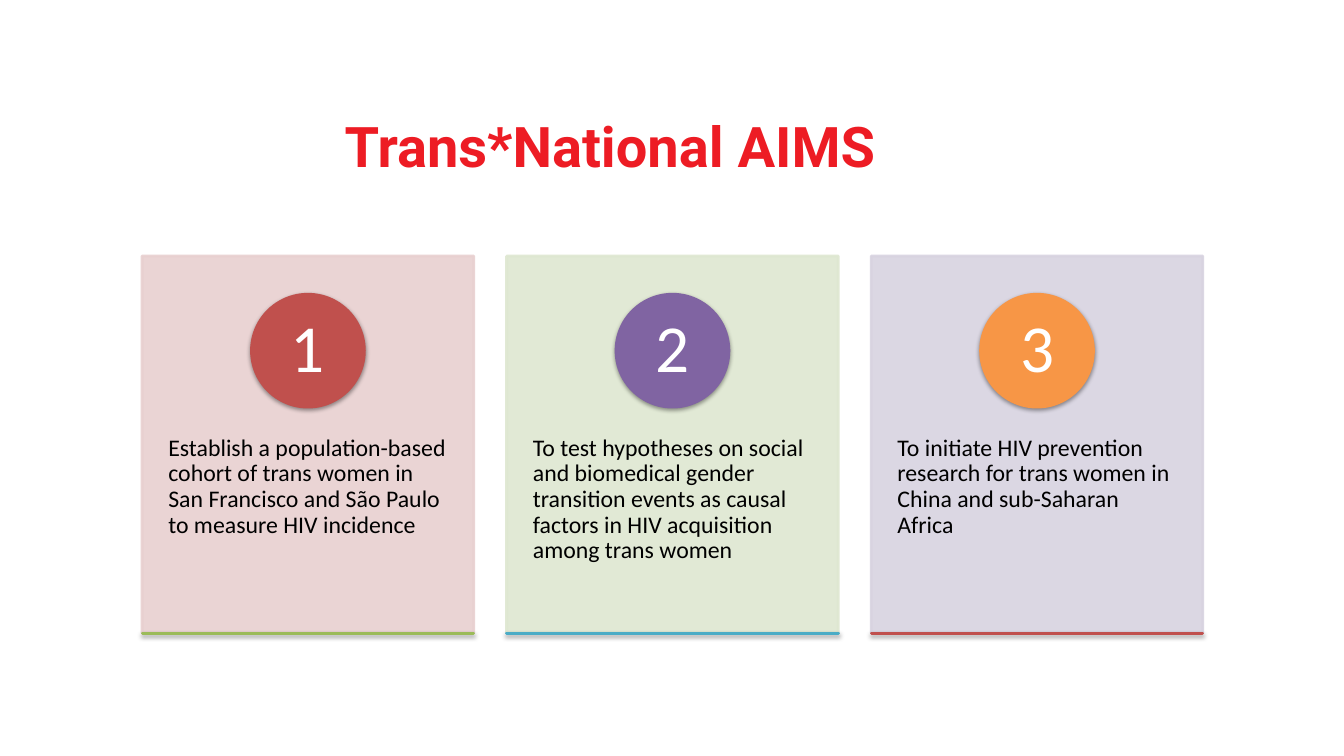
from lxml import etree
from pptx import Presentation
from pptx.dml.color import RGBColor
from pptx.enum.shapes import MSO_SHAPE
from pptx.enum.text import MSO_ANCHOR, PP_ALIGN
from pptx.oxml.ns import qn
from pptx.util import Pt

RECTANGLE, OVAL = MSO_SHAPE.RECTANGLE, MSO_SHAPE.OVAL
TOP, MIDDLE = MSO_ANCHOR.TOP, MSO_ANCHOR.MIDDLE
LEFT, CENTER = PP_ALIGN.LEFT, PP_ALIGN.CENTER

TITLE_RED = RGBColor(0xED, 0x1C, 0x24)
BLACK = RGBColor(0x00, 0x00, 0x00)
WHITE = RGBColor(0xFF, 0xFF, 0xFF)
PALE_RED = RGBColor(0xE8, 0xD0, 0xD0)
PALE_GREEN = RGBColor(0xDE, 0xE7, 0xD1)
PALE_PURPLE = RGBColor(0xD8, 0xD3, 0xE0)
RED = RGBColor(0xC0, 0x50, 0x4D)
GREEN = RGBColor(0x9B, 0xBB, 0x59)
PURPLE = RGBColor(0x80, 0x64, 0xA2)
TEAL = RGBColor(0x4B, 0xAC, 0xC6)
ORANGE = RGBColor(0xF7, 0x96, 0x46)

CARD_LEFT, CARD_TOP = 101.5, 182.9
CARD_WIDTH, CARD_HEIGHT = 236.9, 269.3
CARD_PITCH = 260.4
CIRCLE_TOP, CIRCLE_SIZE = 210.2, 80.6
NUMBER_SIZE = 57
AIM_TOP, AIM_HEIGHT = 285.1, 162

# aim, card colour, circle colour, base line colour
AIMS = [
    ("Establish a population-based cohort of trans women in San Francisco "
     "and São Paulo to measure HIV incidence", PALE_RED, RED, GREEN),
    ("To test hypotheses on social and biomedical gender transition events "
     "as causal factors in HIV acquisition among trans women",
     PALE_GREEN, PURPLE, TEAL),
    ("To initiate HIV prevention research for trans women in China "
     "and sub-Saharan Africa", PALE_PURPLE, ORANGE, RED),
]


def add_panel(kind, left, top, width, height, color, shadowed):
    """Add a filled shape, either with a soft shadow or slightly transparent."""
    shape = slide.shapes.add_shape(kind, Pt(left), Pt(top), Pt(width), Pt(height))
    shape.fill.solid()
    shape.fill.fore_color.rgb = color
    shape.line.color.rgb = color
    shape.line.width = Pt(2)
    shape.shadow.inherit = False
    properties = shape._element.spPr
    if shadowed:
        shadow = etree.SubElement(
            properties.find(qn("a:effectLst")), qn("a:outerShdw"),
            blurRad=str(Pt(3.1)), dist=str(Pt(1.6)), dir="5400000", rotWithShape="0")
        black = etree.SubElement(shadow, qn("a:srgbClr"), val="000000")
        etree.SubElement(black, qn("a:alpha"), val="38000")
    else:
        for paint in properties.iter(qn("a:srgbClr")):
            etree.SubElement(paint, qn("a:alpha"), val="90000")


def add_text(text, left, top, width, height, size, color, alignment=CENTER,
             anchor=MIDDLE, margins=(6.5, 0.7), spacing=0.9, font="Calibri", bold=False):
    box = slide.shapes.add_textbox(Pt(left), Pt(top), Pt(width), Pt(height))
    frame = box.text_frame
    frame.word_wrap = True
    frame.vertical_anchor = anchor
    frame.margin_left = frame.margin_right = Pt(margins[0])
    frame.margin_top = frame.margin_bottom = Pt(margins[1])
    paragraph = frame.paragraphs[0]
    paragraph.alignment = alignment
    paragraph.line_spacing = spacing
    run = paragraph.add_run()
    run.text = text
    run.font.name = font
    run.font.size = Pt(size)
    run.font.bold = bold
    run.font.color.rgb = color


presentation = Presentation()
presentation.slide_width = Pt(960)
presentation.slide_height = Pt(540)
slide = presentation.slides.add_slide(presentation.slide_layouts[6])

add_text("Trans*National AIMS", 90.7, 76.3, 689.8, 55.4, 40, TITLE_RED,
         margins=(7.2, 3.6), spacing=1.0, font="Roboto", bold=True)

for index, (aim, card_color, circle_color, base_color) in enumerate(AIMS):
    left = CARD_LEFT + index * CARD_PITCH
    center = left + CARD_WIDTH / 2
    add_panel(RECTANGLE, left, CARD_TOP, CARD_WIDTH, CARD_HEIGHT, card_color, False)
    add_text(aim, left, AIM_TOP, CARD_WIDTH, AIM_HEIGHT, 17, BLACK,
             alignment=LEFT, anchor=TOP, margins=(18.7, 26))
    add_panel(OVAL, center - CIRCLE_SIZE / 2, CIRCLE_TOP, CIRCLE_SIZE, CIRCLE_SIZE,
              circle_color, True)
    add_text(str(index + 1), center - NUMBER_SIZE / 2,
             CIRCLE_TOP + (CIRCLE_SIZE - NUMBER_SIZE) / 2,
             NUMBER_SIZE, NUMBER_SIZE, 48, WHITE)
    add_panel(RECTANGLE, left, CARD_TOP + CARD_HEIGHT, CARD_WIDTH, 0.01, base_color, True)

presentation.save("out.pptx")
